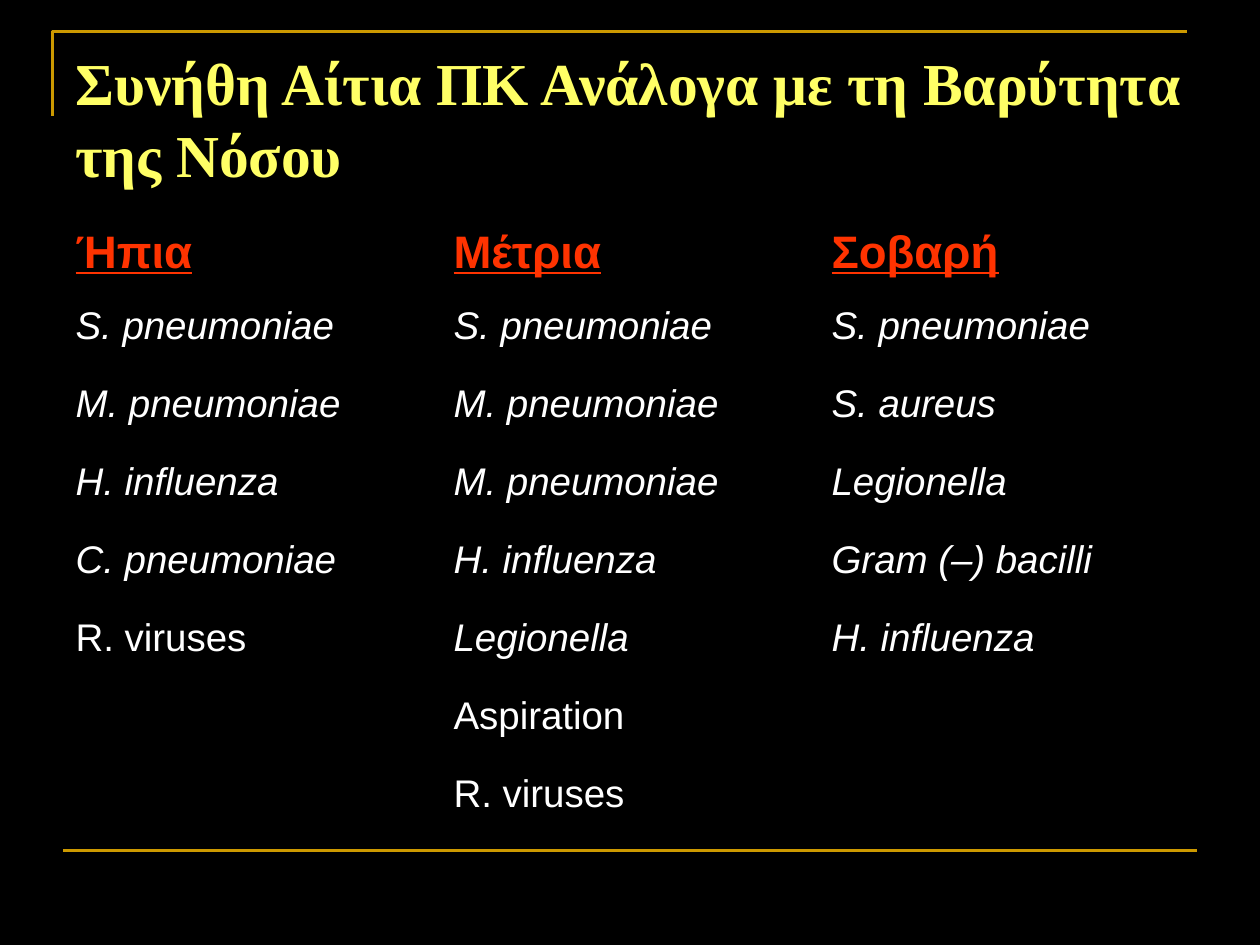
from dataclasses import dataclass

from lxml import etree
from pptx import Presentation
from pptx.dml.color import RGBColor
from pptx.enum.shapes import MSO_CONNECTOR
from pptx.enum.text import MSO_ANCHOR
from pptx.oxml.ns import qn
from pptx.util import Cm, Pt

STRAIGHT = MSO_CONNECTOR.STRAIGHT
BOTTOM = MSO_ANCHOR.BOTTOM


@dataclass(frozen=True)
class Theme:
    """Colours, fonts and type sizes of the slide."""

    background: str = "000000"
    rule: str = "CC9900"
    title: str = "FFFF66"
    heading: str = "FF3300"
    body: str = "FFFFFF"
    title_font: str = "Times New Roman"
    body_font: str = "Arial"
    title_size: float = 34
    heading_size: float = 26
    body_size: float = 22
    rule_width: float = 1.5
    outer_border: float = 2.25
    inner_border: float = 1


THEME = Theme()
TITLE = "Συνήθη Αίτια ΠΚ Ανάλογα με τη Βαρύτητα της Νόσου"
CAUSES = {
    "Ήπια": ["S. pneumoniae", "M. pneumoniae", "H. influenza", "C. pneumoniae",
             "R. viruses"],
    "Μέτρια": ["S. pneumoniae", "M. pneumoniae", "M. pneumoniae", "H. influenza",
               "Legionella", "Aspiration", "R. viruses"],
    "Σοβαρή": ["S. pneumoniae", "S. aureus", "Legionella", "Gram (–) bacilli",
               "H. influenza"],
}
UPRIGHT = {"R. viruses", "Aspiration"}


def colour(value):
    """Return the colour object for a hex value."""
    return RGBColor.from_string(value)


def set_font(paragraph, name, size, value, bold=False):
    """Set the shared font properties of a paragraph."""
    font = paragraph.font
    font.name, font.size, font.bold = name, Pt(size), bold
    font.color.rgb = colour(value)


def style_rule(shape):
    """Give a line or outline the gold rule style."""
    shape.line.color.rgb = colour(THEME.rule)
    shape.line.width = Pt(THEME.rule_width)


def add_corner(slide, left, top, width, height):
    """Draw the open corner above and left of the title."""
    builder = slide.shapes.build_freeform(left, top + height)
    builder.add_line_segments([(left, top), (left + width, top)], close=False)
    corner = builder.convert_to_shape()
    corner.shadow.inherit = False
    corner.fill.background()
    style_rule(corner)


def add_footer_rule(slide, left, top, width):
    """Draw the rule along the foot of the slide."""
    rule = slide.shapes.add_connector(STRAIGHT, left, top, left + width, top)
    style_rule(rule)
    etree.SubElement(rule.line._get_or_add_ln().getparent(), qn("a:effectLst"))


def add_title(slide, left, top, width, height):
    """Place the title on the bottom edge of its box."""
    frame = slide.shapes.add_textbox(left, top, width, height).text_frame
    frame.word_wrap = True
    frame.vertical_anchor = BOTTOM
    paragraph = frame.paragraphs[0]
    paragraph.text = TITLE
    set_font(paragraph, THEME.title_font, THEME.title_size, THEME.title, bold=True)


def set_borders(cell, outer_edges):
    """Draw the four cell borders, heavier on the table's outer edges."""
    properties = cell._tc.get_or_add_tcPr()
    for position, (side, outer) in enumerate(zip("LRTB", outer_edges)):
        width = Pt(THEME.outer_border if outer else THEME.inner_border)
        line = etree.Element(qn(f"a:ln{side}"), w=str(width))
        fill = etree.SubElement(line, qn("a:solidFill"))
        etree.SubElement(fill, qn("a:srgbClr"), val=THEME.background)
        properties.insert(position, line)


def fill_cell(cell, text, is_heading):
    """Write a column heading or the name of a cause."""
    cell.fill.background()
    paragraph = cell.text_frame.paragraphs[0]
    paragraph.text = text
    if is_heading:
        set_font(paragraph, THEME.body_font, THEME.heading_size, THEME.heading, bold=True)
        paragraph.font.underline = True
    else:
        set_font(paragraph, THEME.body_font, THEME.body_size, THEME.body)
        paragraph.font.italic = text not in UPRIGHT


def add_causes_table(slide, left, top, width, height):
    """Place the table of causes, one column for each severity."""
    columns = [[heading, *causes] for heading, causes in CAUSES.items()]
    column_count, row_count = len(columns), max(map(len, columns))
    table = slide.shapes.add_table(
        row_count, column_count, left, top, width, height).table
    table.first_row = table.horz_banding = False
    for column_index, entries in enumerate(columns):
        for row_index in range(row_count):
            cell = table.cell(row_index, column_index)
            text = entries[row_index] if row_index < len(entries) else ""
            fill_cell(cell, text, row_index == 0)
            set_borders(cell, (column_index == 0, column_index == column_count - 1,
                               row_index == 0, row_index == row_count - 1))


def main():
    """Build and save the presentation."""
    presentation = Presentation()
    presentation.slide_width, presentation.slide_height = Cm(25.4), Cm(19.05)
    slide = presentation.slides.add_slide(presentation.slide_layouts[6])
    slide.background.fill.solid()
    slide.background.fill.fore_color.rgb = colour(THEME.background)
    left, width = Cm(1.27), Cm(22.86)
    add_corner(slide, Cm(1.06), Cm(0.64), width, Cm(1.69))
    add_footer_rule(slide, left, Cm(17.15), width)
    add_title(slide, left, Cm(0.76), width, Cm(3.18))
    add_causes_table(slide, left, Cm(4.45), width, Cm(12.57))
    presentation.save("out.pptx")


if __name__ == "__main__":
    main()
